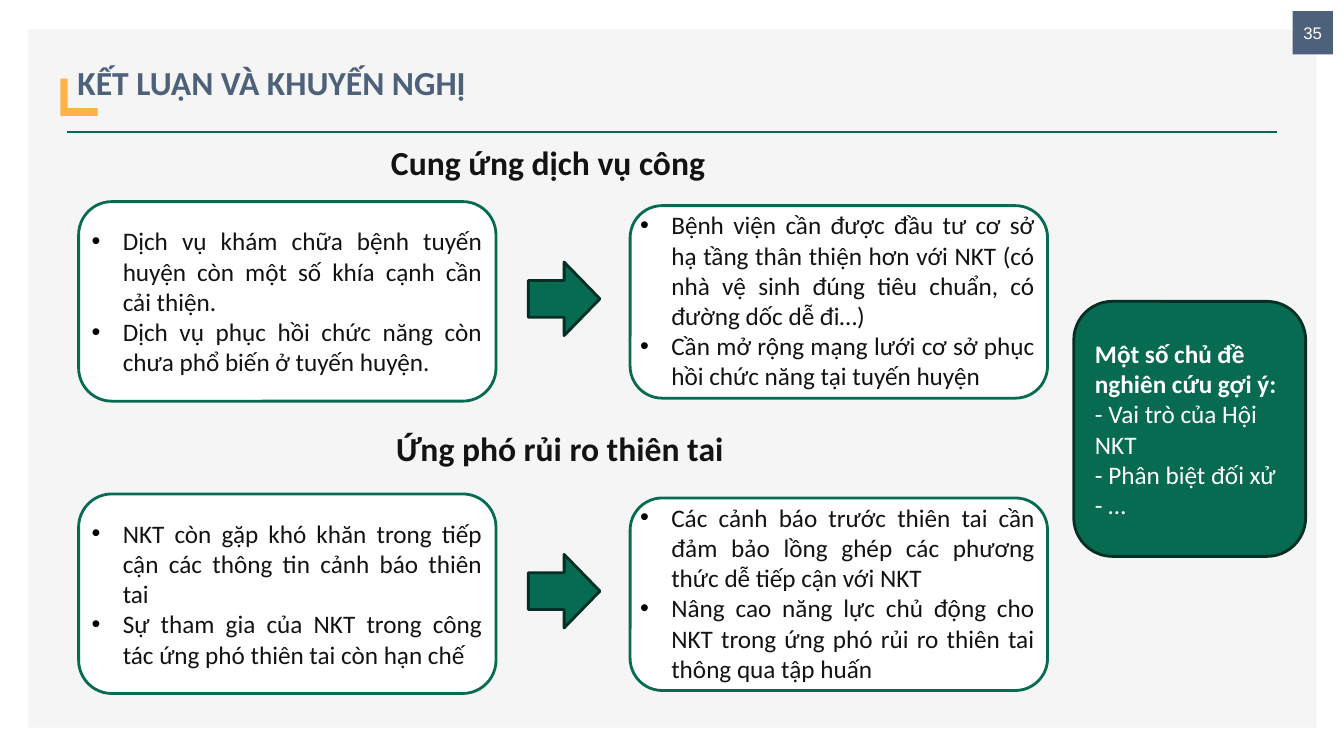
from lxml import etree
from pptx import Presentation
from pptx import util as u
from pptx.dml.color import RGBColor
from pptx.enum import shapes, text
from pptx.oxml.ns import qn

COLORS = {
    "panel": "F5F5F5", "white": "FFFFFF", "green": "076B51", "dark_green": "032F24",
    "orange": "FDB347", "slate": "4E617A", "ink": "131313", "bullet": "000000",
}
TITLE = "KẾT LUẬN VÀ KHUYẾN NGHỊ"
PAGE_NUMBER = "35"
# Each section: heading, heading place, top of its row, findings, recommendations
SECTIONS = [
    ("Cung ứng dịch vụ công", (3.78, 1.36, 3.63, 0.5), 2.0,
     ["Dịch vụ khám chữa bệnh tuyến huyện còn một số khía cạnh cần cải thiện.",
      "Dịch vụ phục hồi chức năng còn chưa phổ biến ở tuyến huyện."],
     ["Bệnh viện cần được đầu tư cơ sở hạ tầng thân thiện hơn với NKT "
      "(có nhà vệ sinh đúng tiêu chuẩn, có đường dốc dễ đi…)",
      "Cần mở rộng mạng lưới cơ sở phục hồi chức năng tại tuyến huyện"]),
    ("Ứng phó rủi ro thiên tai", (3.83, 4.2, 3.48, 0.5), 4.9,
     ["NKT còn gặp khó khăn trong tiếp cận các thông tin cảnh báo thiên tai",
      "Sự tham gia của NKT trong công tác ứng phó thiên tai còn hạn chế"],
     ["Các cảnh báo trước thiên tai cần đảm bảo lồng ghép các phương thức "
      "dễ tiếp cận với NKT",
      "Nâng cao năng lực chủ động cho NKT trong ứng phó rủi ro thiên tai "
      "thông qua tập huấn"]),
]
TOPICS_HEADING = "Một số chủ đề nghiên cứu gợi ý:"
TOPICS = ["- Vai trò của Hội NKT", "- Phân biệt đối xử", "- …"]

SHAPE = shapes.MSO_SHAPE
ALIGN = text.PP_ALIGN
MIDDLE = text.MSO_ANCHOR.MIDDLE


def color(name):
    return RGBColor.from_string(COLORS[name])


def add_box(page, kind, place, fill, line=None):
    box = page.shapes.add_shape(kind, *map(u.Inches, place))
    box.shadow.inherit = False
    box.fill.solid()
    box.fill.fore_color.rgb = color(fill)
    if line:
        box.line.color.rgb = color(line)
        box.line.width = u.Pt(2)
    else:
        box.line.fill.background()
    return box


def add_bullet(para):
    props = para._p.get_or_add_pPr()
    props.set("marL", str(u.Inches(0.31)))
    props.set("indent", str(u.Inches(-0.31)))
    bullet_color = etree.SubElement(props, qn("a:buClr"))
    etree.SubElement(bullet_color, qn("a:srgbClr"), val=COLORS["bullet"])
    etree.SubElement(props, qn("a:buFont"), typeface="Arial")
    etree.SubElement(props, qn("a:buChar"), char="•")


def write(box, lines, size, ink, align=ALIGN.LEFT, bold_lines=0, anchor=text.MSO_ANCHOR.TOP,
          font="Calibri", bullets=False):
    """Fill the box with one paragraph per line; the first bold_lines are bold."""
    frame = box.text_frame
    frame.word_wrap = True
    frame.vertical_anchor = anchor
    for index, line in enumerate(lines):
        para = frame.add_paragraph() if index else frame.paragraphs[0]
        para.alignment = align
        if bullets:
            add_bullet(para)
        span = para.add_run()
        span.text = line
        span.font.name = font
        span.font.size = u.Pt(size)
        span.font.bold = index < bold_lines
        span.font.color.rgb = color(ink)
    return frame


def add_text(page, place, lines, size, **style):
    box = page.shapes.add_textbox(*map(u.Inches, place))
    write(box, lines, size, "ink", ALIGN.JUSTIFY, **style)


def add_frame(page):
    add_box(page, SHAPE.RECTANGLE, (0.28, 0.29, 12.78, 6.93), "panel")
    rule = page.shapes.add_connector(
        shapes.MSO_CONNECTOR.STRAIGHT, *map(u.Inches, (0.66, 1.31, 12.67, 1.31)))
    rule.line.color.rgb = color("green")
    rule.line.width = u.Pt(2)
    etree.SubElement(rule._element.spPr, qn("a:effectLst"))
    add_box(page, SHAPE.RECTANGLE, (0.6, 0.78, 0.37, 0.37), "orange")
    number = add_box(page, SHAPE.RECTANGLE, (12.82, 0.11, 0.4, 0.43), "slate")
    write(number, [PAGE_NUMBER], 12, "white", ALIGN.CENTER, anchor=MIDDLE, font="Arial")
    # The title covers the orange square, leaving only its corner bracket
    title = add_box(page, SHAPE.RECTANGLE, (0.67, 0.36, 11.72, 0.71), "panel")
    frame = write(title, [TITLE], 24, "slate", bold_lines=1, anchor=MIDDLE)
    frame.paragraphs[0].line_spacing = 1.5


def add_section(page, heading, heading_place, top, findings, recommendations):
    add_text(page, heading_place, [heading], 24, bold_lines=1)
    columns = [
        ((0.78, top, 4.14, 1.98), (0.81, top + 0.19, 4.07, 1.62), findings),
        ((6.25, top + 0.04, 4.14, 1.91), (6.25, top + 0.03, 4.11, 1.92), recommendations),
    ]
    for card_place, text_place, points in columns:
        add_box(page, SHAPE.ROUNDED_RECTANGLE, card_place, "white", "green")
        add_text(page, text_place, points, 18, bullets=True)
    add_box(page, SHAPE.RIGHT_ARROW, (5.24, top + 0.6, 0.71, 0.73), "green", "dark_green")


def main():
    deck = Presentation()
    deck.slide_width, deck.slide_height = u.Inches(13.33), u.Inches(7.5)
    page = deck.slides.add_slide(deck.slide_layouts[6])
    add_frame(page)
    for section in SECTIONS:
        add_section(page, *section)
    topics = add_box(page, SHAPE.ROUNDED_RECTANGLE, (10.65, 2.99, 2.3, 2.53),
                     "green", "dark_green")
    write(topics, [TOPICS_HEADING] + TOPICS, 18, "white", bold_lines=1, anchor=MIDDLE)
    deck.save("out.pptx")


if __name__ == "__main__":
    main()
